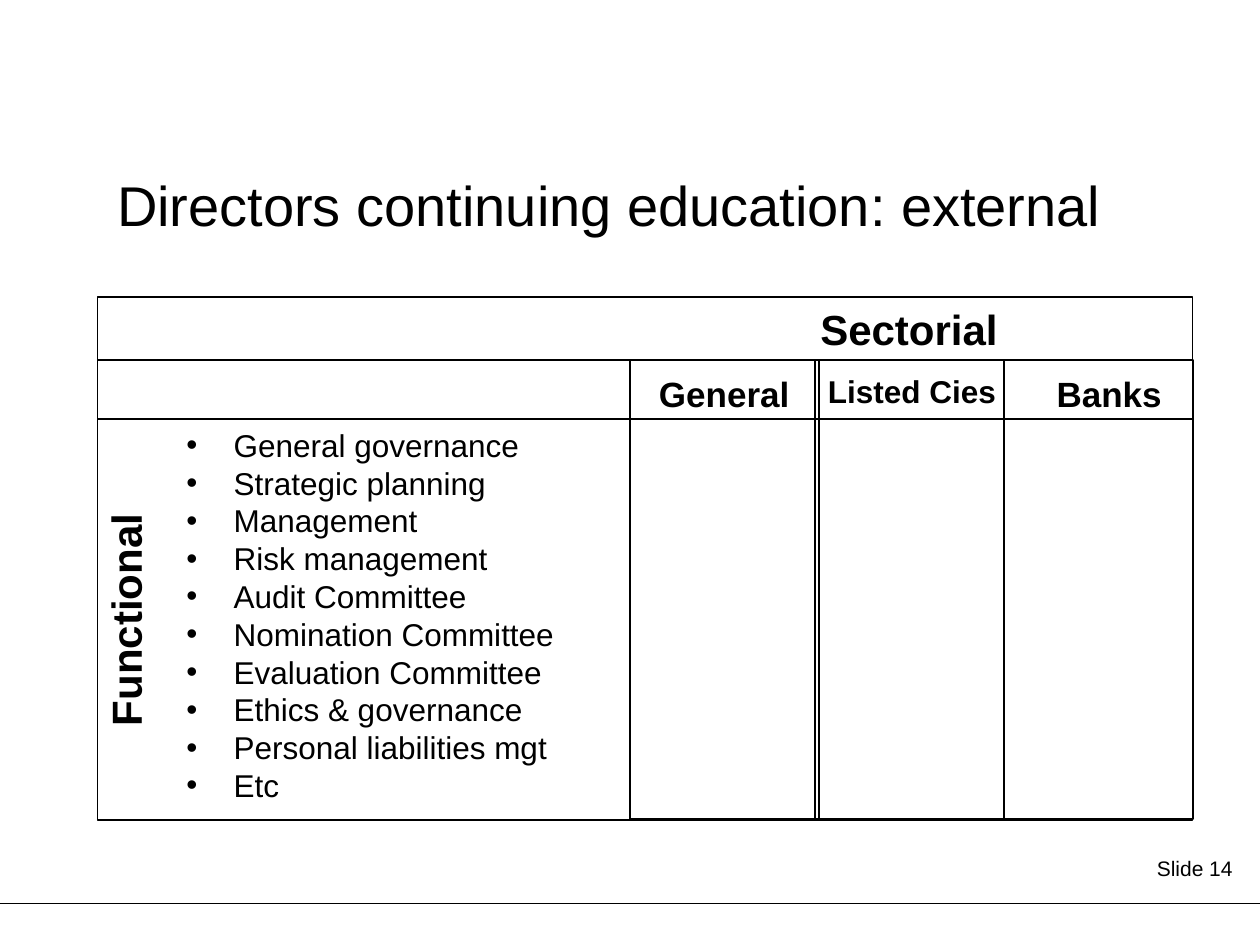
from lxml.etree import SubElement
from pptx import Presentation
from pptx.dml.color import RGBColor
from pptx.enum.shapes import MSO_CONNECTOR as Connector, MSO_SHAPE as Shape
from pptx.enum.text import MSO_ANCHOR as Anchor, PP_ALIGN as Align
from pptx.oxml.ns import qn
from pptx.util import Cm, Pt

COLOURS = {"ink": "000000", "paper": "FFFFFF"}
TOPICS = [
    "General governance", "Strategic planning", "Management", "Risk management",
    "Audit Committee", "Nomination Committee", "Evaluation Committee",
    "Ethics & governance", "Personal liabilities mgt", "Etc",
]
SECTORS = [("General", 3.4, 20), ("Listed Cies", 4.17, 18), ("Banks", 3.78, 20)]
COLUMN_LEFTS = [12.7, 16.43, 20.24]


def colour(name):
    return RGBColor.from_string(COLOURS[name])


class PageBuilder:
    font_name = "Arial"
    line_width = Pt(0.75)
    hanging = Cm(0.95)

    def __init__(self, page):
        self.page = page

    def add_span(self, para, text, size, align=Align.LEFT, bold=False):
        para.alignment = align
        span = para.add_run()
        span.text = text
        formats = {"name": self.font_name, "size": Pt(size), "bold": bold}
        for key, value in formats.items():
            setattr(span.font, key, value)
        span.font.color.rgb = colour("ink")

    def bullet(self, para):
        props = para._p.get_or_add_pPr()
        props.set("marL", str(self.hanging))
        props.set("indent", str(-self.hanging))
        SubElement(props, qn("a:buFont"), typeface=self.font_name)
        SubElement(props, qn("a:buChar"), char="•")

    def text(self, area, lines, size, align=Align.LEFT, bold=False,
             anchor=Anchor.TOP, rotation=0, bullets=False):
        box = self.page.shapes.add_textbox(*map(Cm, area))
        box.rotation = rotation
        frame = box.text_frame
        frame.word_wrap = True
        frame.vertical_anchor = anchor
        for index, line in enumerate(lines):
            para = frame.add_paragraph() if index else frame.paragraphs[0]
            if bullets:
                self.bullet(para)
            self.add_span(para, line, size, align, bold)

    def rule(self, left, top, right, bottom):
        line = self.page.shapes.add_connector(
            Connector.STRAIGHT, Cm(left), Cm(top), Cm(right), Cm(bottom))
        line.line.color.rgb = colour("ink")
        line.line.width = self.line_width
        SubElement(line._element.spPr, qn("a:effectLst"))

    def outline(self, *area):
        box = self.page.shapes.add_shape(Shape.RECTANGLE, *map(Cm, area))
        box.shadow.inherit = False
        box.fill.background()
        box.line.color.rgb = colour("ink")
        box.line.width = self.line_width

    def header_table(self, left, top, height, columns):
        width = sum(column[1] for column in columns)
        table = self.page.shapes.add_table(
            1, len(columns), Cm(left), Cm(top), Cm(width), Cm(height)).table
        for index, (label, column_width, size) in enumerate(columns):
            table.columns[index].width = Cm(column_width)
            cell = table.cell(0, index)
            cell.fill.solid()
            cell.fill.fore_color.rgb = colour("paper")
            self.add_span(cell.text_frame.paragraphs[0], label, size, Align.CENTER, True)


def main():
    deck = Presentation()
    deck.slide_width, deck.slide_height = Cm(25.4), Cm(19.05)
    builder = PageBuilder(deck.slides.add_slide(deck.slide_layouts[6]))

    builder.rule(0, 18.21, 25.4, 18.21)
    builder.text((2.11, 3.12, 21.18, 2.01), ["Directors continuing education: external"],
                 32, anchor=Anchor.MIDDLE)
    builder.text((21.9, 17.12, 3.2, 0.79), ["Slide 14"], 12, Align.RIGHT)
    builder.text((-1.5, 11.86, 8.05, 1.27), ["Functional"], 24, Align.CENTER, True,
                 rotation=270)
    builder.text((14.3, 5.99, 8.05, 1.27), ["Sectorial"], 24, Align.CENTER, True)
    builder.text((3.51, 8.46, 8.2, 7.95), TOPICS, 18, bullets=True)
    builder.header_table(12.9, 7.44, 1.04, SECTORS)
    for left in COLUMN_LEFTS:
        builder.outline(left, 7.26, 3.81, 9.25)
    builder.outline(1.96, 7.26, 22.08, 1.19)
    builder.outline(1.96, 5.99, 22.08, 10.54)

    deck.save("out.pptx")


if __name__ == "__main__":
    main()
